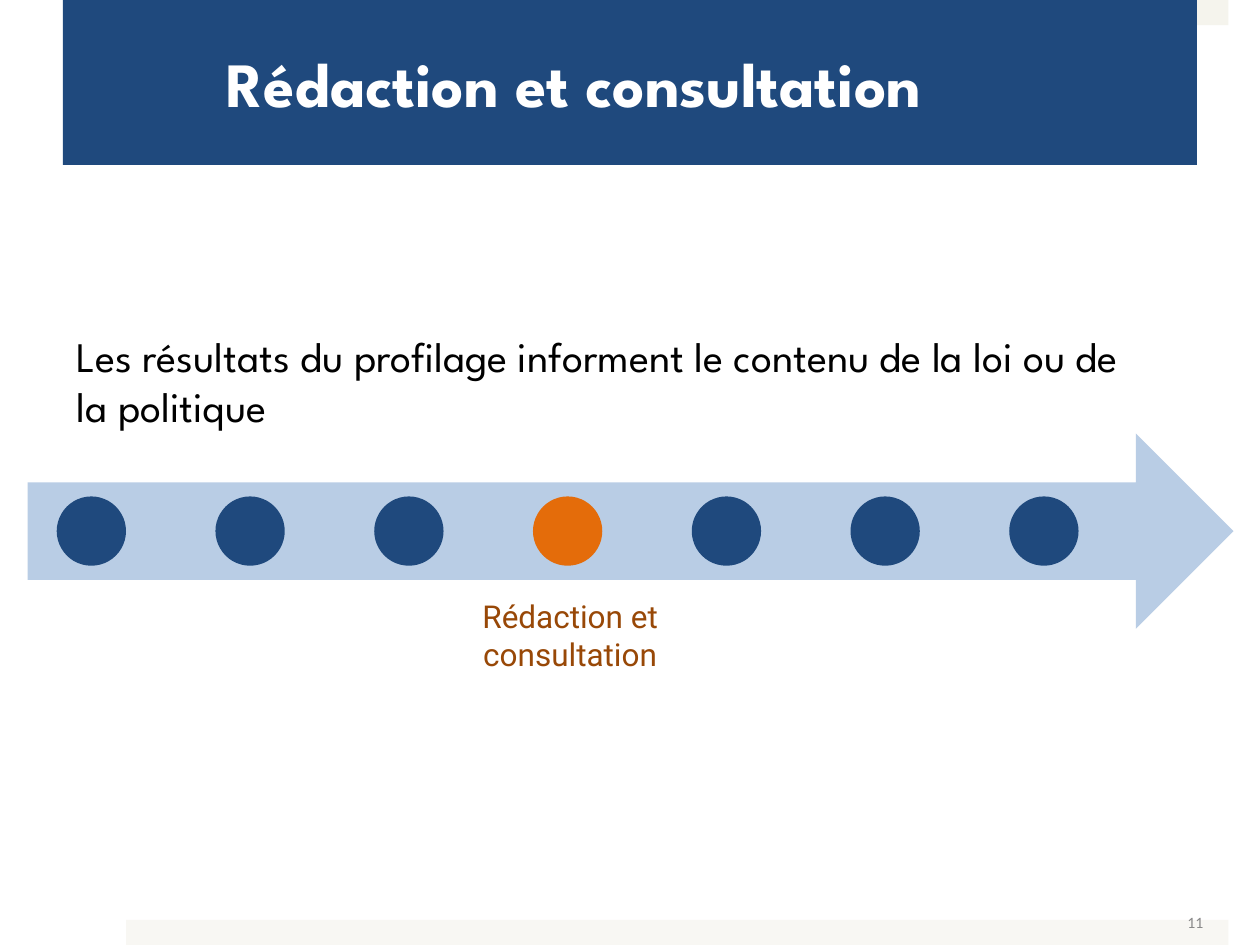
from dataclasses import dataclass
from typing import NamedTuple

from pptx import Presentation
from pptx.dml.color import RGBColor
from pptx.enum.shapes import MSO_SHAPE as Shape
from pptx.enum.text import MSO_ANCHOR as Anchor, PP_ALIGN as Align
from pptx.util import Inches, Pt

COLS, ROWS = 100, 75
STEPS, CURRENT_STEP = 7, 3


@dataclass(frozen=True)
class Theme:
    navy: str = "1F497D"
    sky: str = "B9CDE5"
    orange: str = "E46C0A"
    brown: str = "984807"
    top_band: str = "F5F4ED"
    bottom_band: str = "F8F7F3"
    white: str = "FFFFFF"
    black: str = "000000"
    grey: str = "898989"
    heading_font: str = "League Spartan"
    label_font: str = "Roboto"
    number_font: str = "Calibri"
    title_size: int = 36
    body_size: int = 24
    label_size: int = 18
    number_size: int = 9


class Box(NamedTuple):
    col: float
    row: float
    cols: float
    rows: float


class Style(NamedTuple):
    font: str
    size: int
    color: str
    bold: bool = False
    align: Align = Align.LEFT
    anchor: Anchor = Anchor.TOP
    insets: tuple[float, float, float, float] = (0.1, 0.05, 0.1, 0.05)


def place(prs, box: Box) -> tuple[int, int, int, int]:
    unit_x, unit_y = prs.slide_width / COLS, prs.slide_height / ROWS
    return (round(box.col * unit_x), round(box.row * unit_y),
            round(box.cols * unit_x), round(box.rows * unit_y))


def add_filled(prs, shapes, kind: Shape, box: Box, color: str):
    sp = shapes.add_shape(kind, *place(prs, box))
    sp.shadow.inherit = False
    sp.fill.solid()
    sp.fill.fore_color.rgb = RGBColor.from_string(color)
    sp.line.fill.background()
    return sp


def write(sp, text: str, style: Style) -> None:
    tf = sp.text_frame
    tf.word_wrap = True
    tf.vertical_anchor = style.anchor
    (tf.margin_left, tf.margin_top,
     tf.margin_right, tf.margin_bottom) = map(Inches, style.insets)
    tf.text = text
    p = tf.paragraphs[0]
    p.alignment = style.align
    font = p.runs[0].font
    font.name, font.size, font.bold = style.font, Pt(style.size), style.bold
    font.color.rgb = RGBColor.from_string(style.color)


def add_text(prs, shapes, box: Box, text: str, style: Style) -> None:
    write(shapes.add_textbox(*place(prs, box)), text, style)


def add_timeline(prs, shapes, theme: Theme) -> None:
    group = shapes.add_group_shape().shapes
    add_filled(prs, group, Shape.RIGHT_ARROW, Box(2.2, 34.4, 95.7, 15.5), theme.sky)
    first, pitch, size = 4.5, 12.6, 5.5
    for step in range(STEPS):
        color = theme.orange if step == CURRENT_STEP else theme.navy
        dot = Box(first + step * pitch, 39.4, size, size)
        add_filled(prs, group, Shape.OVAL, dot, color)


def main() -> None:
    theme = Theme()
    prs = Presentation()
    prs.slide_width, prs.slide_height = Inches(10), Inches(7.5)
    shapes = prs.slides.add_slide(prs.slide_layouts[6]).shapes

    for row, color in ((0, theme.top_band), (ROWS - 2, theme.bottom_band)):
        add_filled(prs, shapes, Shape.RECTANGLE, Box(10, row, 87.5, 2), color)
    add_text(prs, shapes, Box(72.9, 71.2, 23.3, 4), "11",
             Style(theme.number_font, theme.number_size, theme.grey,
                   align=Align.RIGHT, anchor=Anchor.MIDDLE,
                   insets=(0.07, 0.04, 0.07, 0.04)))

    title = add_filled(prs, shapes, Shape.RECTANGLE, Box(5, 0, 90, 13.1), theme.navy)
    write(title, "Rédaction et consultation",
          Style(theme.heading_font, theme.title_size, theme.white, bold=True,
                anchor=Anchor.MIDDLE, insets=(1.3, 0.05, 0.3, 0.05)))

    add_timeline(prs, shapes, theme)
    add_text(prs, shapes, Box(35, 46.9, 20.5, 7.1), "Rédaction et consultation",
             Style(theme.label_font, theme.label_size, theme.brown, align=Align.CENTER))
    add_text(prs, shapes, Box(5.1, 25.7, 84.9, 38.5),
             "Les résultats du profilage informent le contenu de la loi ou de la politique",
             Style(theme.heading_font, theme.body_size, theme.black))

    prs.save("out.pptx")


if __name__ == "__main__":
    main()
